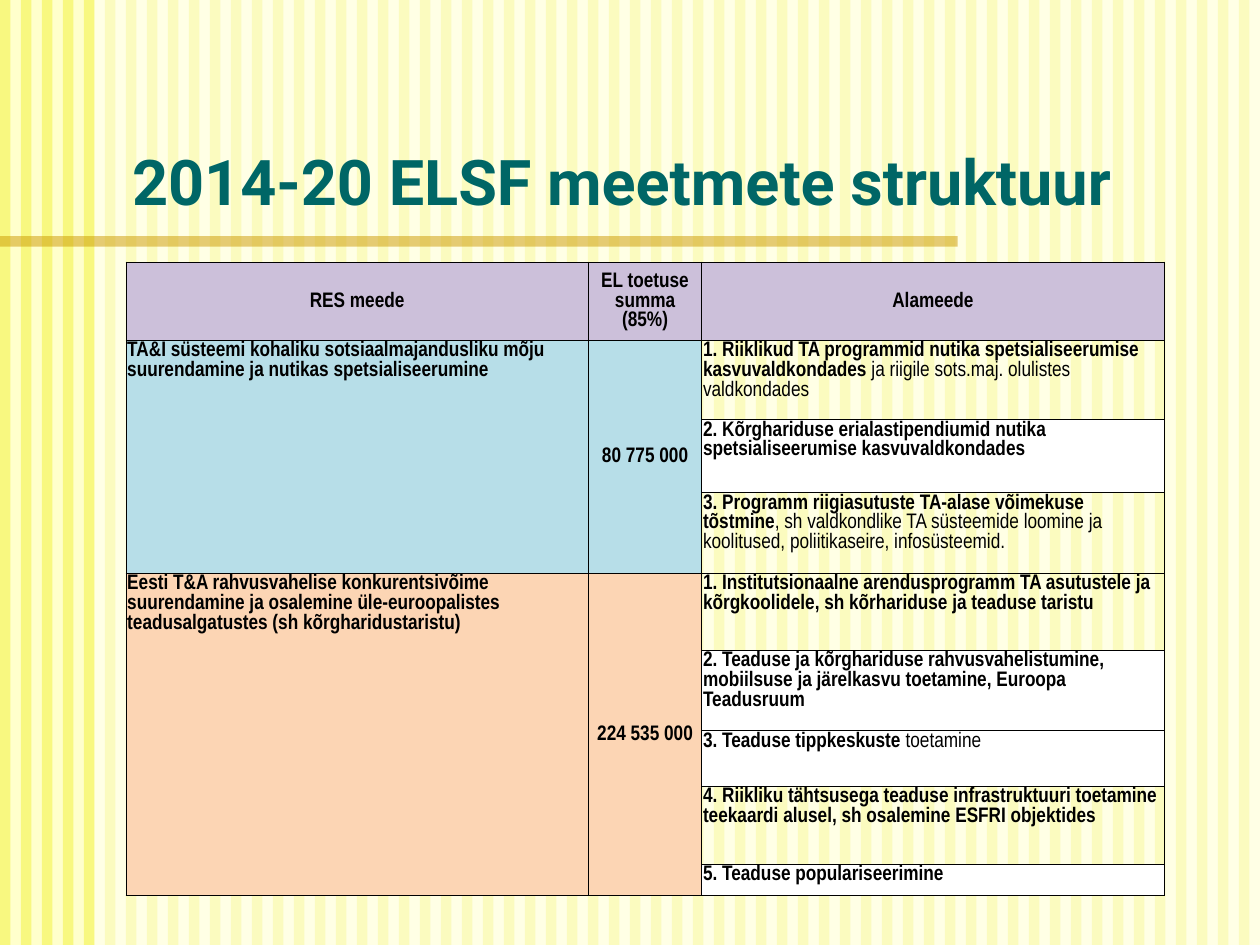
from lxml.etree import SubElement
from pptx import Presentation
from pptx.dml.color import RGBColor
from pptx.enum.shapes import MSO_SHAPE as Shape
from pptx.enum.text import MSO_ANCHOR as Anchor, PP_ALIGN as Align
from pptx.oxml.ns import qn
from pptx.util import Inches, Pt

WIDTH, HEIGHT = 10, 7.5
STRIPE_PITCH = WIDTH / 60
LILAC, BLUE, PEACH, WHITE = "CCC0DA", "B7DEE8", "FCD5B4", "FFFFFF"

COLUMNS = [3.67, 0.9, 3.67]
ROWS = [0.62, 0.63, 0.58, 0.64, 0.61, 0.64, 0.44, 0.62, 0.25]
HEADINGS = ["RES meede", "EL toetuse summa (85%)", "Alameede"]

# Each measure: name, sum, fill, then sub-measures as (bold text, plain text, fill)
MEASURES = [
    ("TA&I süsteemi kohaliku sotsiaalmajandusliku mõju suurendamine ja nutikas spetsialiseerumine",
     "80 775 000", BLUE, [
         ("1. Riiklikud TA programmid nutika spetsialiseerumise kasvuvaldkondades",
          " ja riigile sots.maj. olulistes valdkondades", None),
         ("2. Kõrghariduse erialastipendiumid nutika spetsialiseerumise kasvuvaldkondades",
          "", WHITE),
         ("3. Programm riigiasutuste TA-alase võimekuse tõstmine",
          ", sh valdkondlike TA süsteemide loomine ja koolitused, poliitikaseire, infosüsteemid.",
          None),
     ]),
    ("Eesti T&A rahvusvahelise konkurentsivõime suurendamine ja osalemine "
     "üle-euroopalistes teadusalgatustes (sh kõrgharidustaristu)",
     "224 535 000", PEACH, [
         ("1. Institutsionaalne arendusprogramm TA asutustele ja kõrgkoolidele, "
          "sh kõrhariduse ja teaduse taristu", "", None),
         ("2. Teaduse ja kõrghariduse rahvusvahelistumine, mobiilsuse ja järelkasvu "
          "toetamine, Euroopa Teadusruum", "", WHITE),
         ("3. Teaduse tippkeskuste", " toetamine", WHITE),
         ("4. Riikliku tähtsusega teaduse infrastruktuuri toetamine teekaardi alusel, "
          "sh osalemine ESFRI objektides", "", None),
         ("5. Teaduse populariseerimine", "", WHITE),
     ]),
]


def paint(fill, color):
    """Make a fill solid, or empty when there is no colour."""
    if color is None:
        fill.background()
    else:
        fill.solid()
        fill.fore_color.rgb = RGBColor.from_string(color)


def add_span(para, text, font, size, color, bold=True):
    span = para.add_run()
    span.text = text
    span.font.name = font
    span.font.size = Pt(size)
    span.font.bold = bold
    span.font.color.rgb = RGBColor.from_string(color)


def add_band(page, left, top, width, height, color, opacity=100):
    band = page.shapes.add_shape(Shape.RECTANGLE, *map(Inches, (left, top, width, height)))
    band.shadow.inherit = False
    band.line.fill.background()
    paint(band.fill, color)
    if opacity < 100:
        tint = band.fill._xPr.find(".//" + qn("a:srgbClr"))
        SubElement(tint, qn("a:alpha"), val=str(opacity * 1000))


def add_backdrop(page):
    paint(page.background.fill, "FFFFCC")
    for index in range(60):
        add_band(page, index * STRIPE_PITCH, 0, STRIPE_PITCH / 2, HEIGHT, "F8F880")
    add_band(page, 0.75, 0, WIDTH - 0.75, HEIGHT, WHITE, 50)
    add_band(page, 0, HEIGHT / 4, 7.6, STRIPE_PITCH / 2, "CC9900", 50)


def add_title(page, text):
    box = page.shapes.add_textbox(*map(Inches, (0.95, 1.07, 8.93, 0.71)))
    frame = box.text_frame
    frame.word_wrap = True
    frame.vertical_anchor = Anchor.BOTTOM
    add_span(frame.paragraphs[0], text, "Roboto", 36, "006666")


def add_borders(cell):
    properties = cell._tc.get_or_add_tcPr()
    for side in ("lnL", "lnR", "lnT", "lnB"):
        line = SubElement(properties, qn(f"a:{side}"), w=str(Pt(0.5)))
        SubElement(SubElement(line, qn("a:solidFill")), qn("a:srgbClr"), val="000000")


def fill_cell(cell, bold_text, plain_text="", fill=None, centred=False):
    paint(cell.fill, fill)
    para = cell.text_frame.paragraphs[0]
    if centred:
        cell.vertical_anchor = Anchor.MIDDLE
        para.alignment = Align.CENTER
    for text, bold in ((bold_text, True), (plain_text, False)):
        if text:
            add_span(para, text, "Arial Narrow", 12, "000000", bold)


def add_grid(page):
    """Add the bordered table with its column and row sizes, still empty."""
    frame = page.shapes.add_table(len(ROWS), len(COLUMNS), Inches(1), Inches(2.08),
                                  Inches(sum(COLUMNS)), Inches(sum(ROWS)))
    table = frame.table
    table.first_row = table.horz_banding = False
    for column, width in zip(table.columns, COLUMNS):
        column.width = Inches(width)
    for row, height in zip(table.rows, ROWS):
        row.height = Inches(height)
    for cell in table.iter_cells():
        cell.margin_left = cell.margin_right = cell.margin_top = Inches(0.01)
        cell.margin_bottom = 0
        add_borders(cell)
        paint(cell.fill, None)
    return table


def add_measures(page):
    table = add_grid(page)
    for column, heading in enumerate(HEADINGS):
        fill_cell(table.cell(0, column), heading, fill=LILAC, centred=True)
    first = 1
    for name, amount, color, parts in MEASURES:
        last = first + len(parts) - 1
        for column, text in enumerate((name, amount)):
            cell = table.cell(first, column)
            cell.merge(table.cell(last, column))
            fill_cell(cell, text, fill=color, centred=column == 1)
        for row, part in enumerate(parts, first):
            fill_cell(table.cell(row, 2), *part)
        first = last + 1


def main():
    deck = Presentation()
    deck.slide_width, deck.slide_height = Inches(WIDTH), Inches(HEIGHT)
    page = deck.slides.add_slide(deck.slide_layouts[6])
    add_backdrop(page)
    add_title(page, "2014-20 ELSF meetmete struktuur")
    add_measures(page)
    deck.save("out.pptx")


if __name__ == "__main__":
    main()
